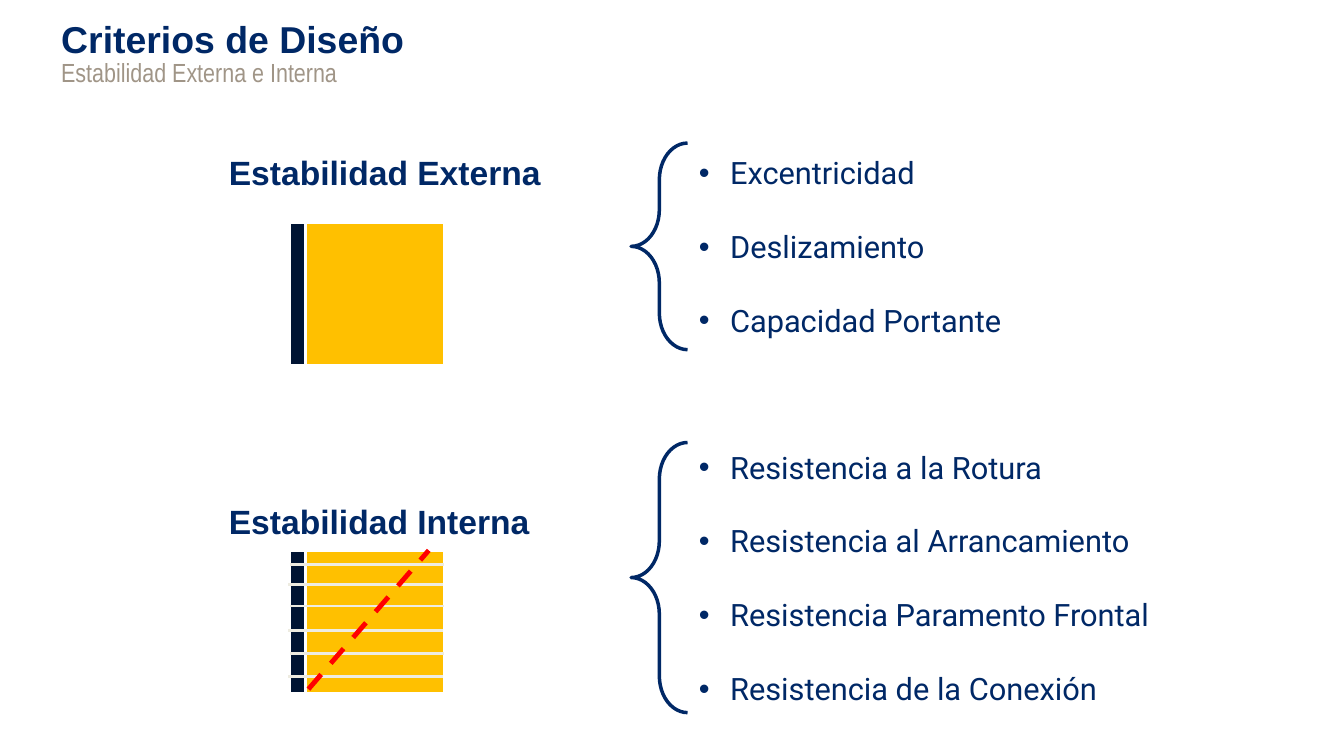
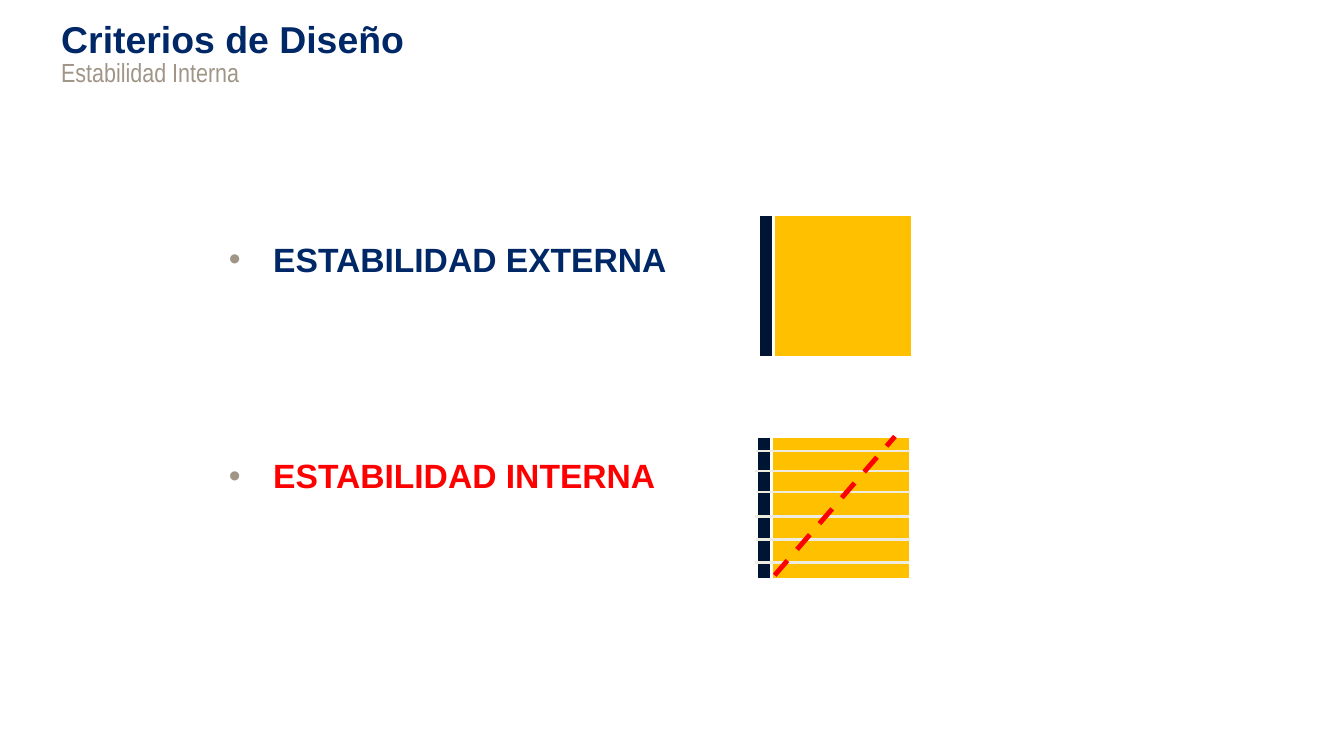
from pptx import Presentation
from pptx.dml.color import RGBColor as RGB
from pptx.enum.dml import MSO_LINE as Dash
from pptx.enum.shapes import MSO_CONNECTOR as Conn, MSO_SHAPE as Geo
from pptx.enum.text import MSO_ANCHOR as Anchor
from pptx.oxml.ns import qn
from pptx.util import Inches, Pt
from lxml.etree import SubElement as Sub

NAVY = RGB(0x00, 0x28, 0x66)
DARK = RGB(0x00, 0x14, 0x33)
GOLD = RGB(0xFF, 0xC0, 0x00)
TAUPE = RGB(0xA0, 0x95, 0x87)
CREAM = RGB(0xEE, 0xEC, 0xE1)
WHITE = RGB(0xFF, 0xFF, 0xFF)
RED = RGB(0xFF, 0x00, 0x00)

WIDE, HIGH = Inches(13.33), Inches(7.5)
WALL = (11.48, 18.93)
LAYERS = (0.1, 0.24, 0.39, 0.56, 0.72, 0.88)


# Boxes are (left, top, width, height) in percent of the slide
def part(box, x, y, w=0, h=0):
    """A box inside another, given as shares of it."""
    left, top, wide, high = box
    return left + x * wide, top + y * high, w * wide, h * high


def place(box):
    x, y, w, h = box
    return [int(v * full / 100)
            for v, full in ((x, WIDE), (y, HIGH), (w, WIDE), (h, HIGH))]


def bullet(para, indent, color):
    props = para._p.get_or_add_pPr()
    props.set("marL", str(Inches(indent)))
    props.set("indent", str(-Inches(indent)))
    tint = Sub(Sub(props, qn("a:buClr")), qn("a:srgbClr"))
    tint.set("val", str(color))
    Sub(props, qn("a:buFont")).set("typeface", "Arial")
    Sub(props, qn("a:buChar")).set("char", "•")


def write(slide, box, lines, size, colors, face="Arial", bold=False,
          gap=0, indent=0, dot=NAVY, anchor=Anchor.TOP):
    frame = slide.shapes.add_textbox(*place(box)).text_frame
    frame.word_wrap = True
    frame.vertical_anchor = anchor
    frame.margin_left = frame.margin_right = 0
    frame.margin_top = frame.margin_bottom = 0
    frame.text = "\n".join(lines)
    for i, para in enumerate(frame.paragraphs):
        if i:
            para.space_before = Pt(gap)
        if indent:
            bullet(para, indent, dot)
        font = para.runs[0].font
        font.name, font.size, font.bold = face, Pt(size), bold
        font.color.rgb = colors[i % len(colors)]


def shape(slide, geo, box, line, width, fill=None):
    item = slide.shapes.add_shape(geo, *place(box))
    item.shadow.inherit = False
    if fill is None:
        item.fill.background()
    else:
        item.fill.solid()
        item.fill.fore_color.rgb = fill
    item.line.color.rgb, item.line.width = line, Pt(width)
    return item


def rule(slide, box, start, end, color, width, dash=None):
    ends = [v for point in (start, end) for v in place(part(box, *point))[:2]]
    item = slide.shapes.add_connector(Conn.STRAIGHT, *ends)
    item.line.color.rgb, item.line.width = color, Pt(width)
    if dash:
        item.line.dash_style = dash
    Sub(item._element.spPr, qn("a:effectLst"))


# Title and subtitle
def header(slide, box, sub):
    write(slide, part(box, 0, 0, 1, 0.6), ["Criterios de Diseño"],
          26.7, [NAVY], bold=True)
    write(slide, part(box, 0, 0.57, 1, 0.43), [sub],
          18.7, [TAUPE], "Arial Narrow")


# Soil block with its facing; an inner one has layers and a failure line
def wall(slide, box, inner):
    shape(slide, Geo.RECTANGLE, box, WHITE, 2, GOLD)
    shape(slide, Geo.RECTANGLE, part(box, 0, 0, 0.1, 1), WHITE, 2, DARK)
    if inner:
        for i, y in enumerate(LAYERS):
            shift = -0.01 * (i % 2)
            rule(slide, box, (shift, y), (1 + shift, y), CREAM, 1.75)
        rule(slide, box, (0.12, 0.97), (0.9, 0), RED, 3.5, Dash.DASH)


# Brace with the checks it groups
def checks(slide, box, lines):
    brace = shape(slide, Geo.LEFT_BRACE, part(box, 0, 0, 0.1, 1), NAVY, 2.5)
    brace.adjustments[0], brace.adjustments[1] = 0.65, 0.5
    write(slide, part(box, 0.12, 0, 0.88, 1), lines, 22, [NAVY], "Roboto",
          gap=26.4, indent=0.31, anchor=Anchor.MIDDLE)


def start(deck, sub):
    slide = deck.slides.add_slide(deck.slide_layouts[6])
    header(slide, (4.55, 2.13, 91, 9.3), sub)
    return slide


def main():
    deck = Presentation()
    deck.slide_width, deck.slide_height = WIDE, HIGH

    # Both kinds of stability and their checks
    slide = start(deck, "Estabilidad Externa e Interna")
    rows = (
        ("Estabilidad Externa", 20.13, 29.47, 18.93, 27.33,
         ["Excentricidad", "Deslizamiento", "Capacidad Portante"]),
        ("Estabilidad Interna", 66.27, 72.8, 58.53, 35.73,
         ["Resistencia a la Rotura", "Resistencia al Arrancamiento",
          "Resistencia Paramento Frontal", "Resistencia de la Conexión"]),
    )
    for i, (head, top, block, brace, high, lines) in enumerate(rows):
        write(slide, (17.03, top, 27, 5.3), [head], 24, [NAVY], bold=True)
        checks(slide, (46.96, brace, 42, high), lines)
        wall(slide, (21.57, block, *WALL), inner=i == 1)

    # Inner stability picked out
    slide = start(deck, "Estabilidad Interna")
    write(slide, (17.03, 31.56, 38, 33.6),
          ["ESTABILIDAD EXTERNA", "ESTABILIDAD INTERNA"], 24, [NAVY, RED],
          bold=True, gap=126, indent=0.44, dot=TAUPE)
    wall(slide, (56.41, 28.4, *WALL), inner=False)
    wall(slide, (56.26, 57.73, *WALL), inner=True)

    deck.save("out.pptx")


if __name__ == "__main__":
    main()
